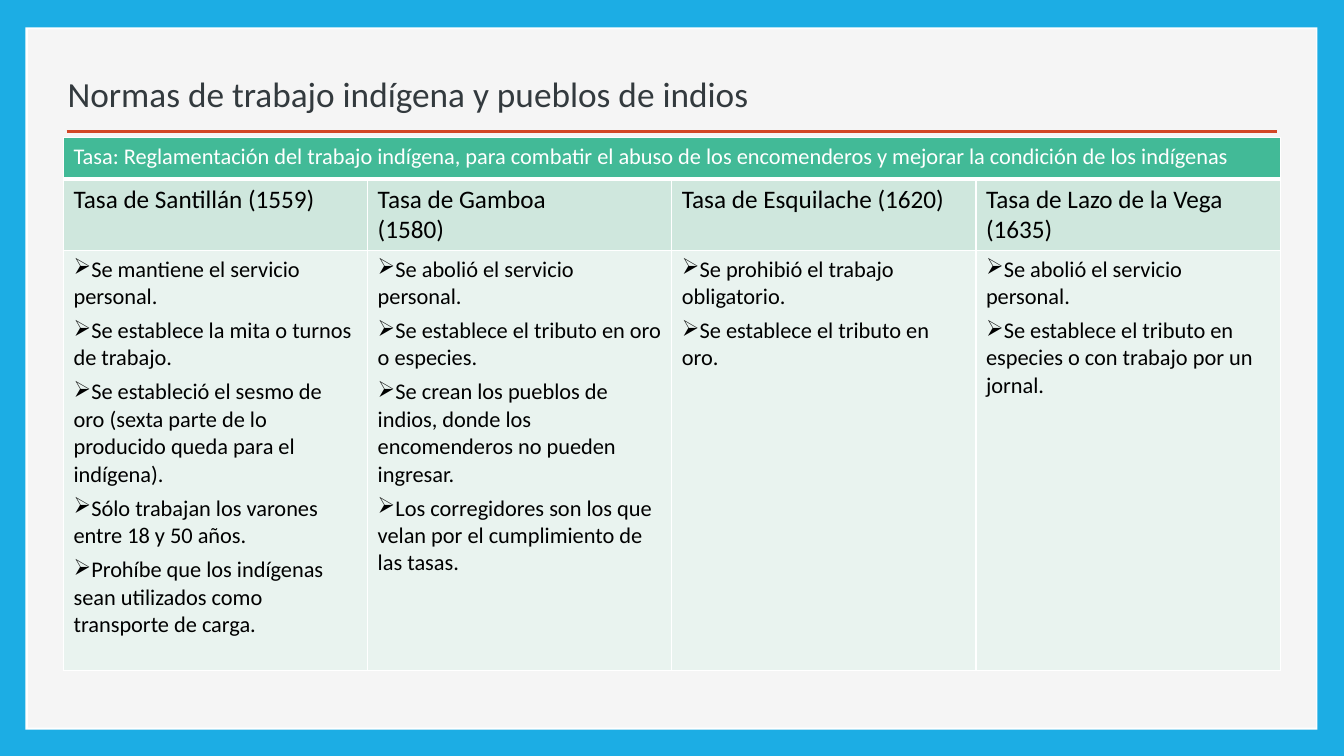
from dataclasses import dataclass

from lxml.etree import SubElement
from pptx import Presentation
from pptx.dml.color import RGBColor as Rgb
from pptx.enum.shapes import MSO_CONNECTOR as Link, MSO_SHAPE as Form
from pptx.enum.text import MSO_ANCHOR as Anchor, MSO_AUTO_SIZE as Fit, PP_ALIGN as Align
from pptx.oxml.ns import qn
from pptx.util import Cm, Pt


@dataclass(frozen=True)
class Theme:
    font: str = "Calibri"
    back: str = "1CADE4"
    white: str = "FFFFFF"
    panel: str = "F5F5F5"
    rule: str = "D24726"
    title: str = "333A3E"
    ink: str = "000000"
    head: str = "42BA97"
    name: str = "CFE7DD"
    body: str = "E9F3EF"
    title_size: float = 25.2
    name_size: float = 18
    body_size: float = 16
    gap: float = 4.8


TITLE = "Normas de trabajo indígena y pueblos de indios"
HEAD = ("Tasa: Reglamentación del trabajo indígena, para combatir el abuso de los "
        "encomenderos y mejorar la condición de los indígenas")
RATES = {
    "Tasa de Santillán (1559)": [
        "Se mantiene el servicio personal.",
        "Se establece la mita o turnos de trabajo.",
        "Se estableció el sesmo de oro (sexta parte de lo producido queda para el indígena).",
        "Sólo trabajan los varones entre 18 y 50 años.",
        "Prohíbe que los indígenas sean utilizados como transporte de carga.",
    ],
    "Tasa de Gamboa\n(1580)": [
        "Se abolió el servicio personal.",
        "Se establece el tributo en oro o especies.",
        "Se crean los pueblos de indios, donde los encomenderos no pueden ingresar.",
        "Los corregidores son los que velan por el cumplimiento de las tasas.",
    ],
    "Tasa de Esquilache (1620)": [
        "Se prohibió el trabajo obligatorio.",
        "Se establece el tributo en oro.",
    ],
    "Tasa de Lazo de la Vega (1635)": [
        "Se abolió el servicio personal.",
        "Se establece el tributo en especies o con trabajo por un jornal.",
    ],
}


class Page:
    """Draws on one slide in one theme; lengths are in centimetres."""

    def __init__(self, slide, theme):
        self.slide, self.theme = slide, theme
        fill = slide.background.fill
        fill.solid()
        fill.fore_color.rgb = Rgb.from_string(theme.back)

    def style(self, frame, size, color):
        for par in frame.paragraphs:
            for run in par.runs:
                font = run.font
                font.name, font.size, font.bold = self.theme.font, Pt(size), False
                font.color.rgb = Rgb.from_string(color)

    def panel(self, left, top, width, height, color):
        box = self.slide.shapes.add_shape(
            Form.RECTANGLE, Cm(left), Cm(top), Cm(width), Cm(height))
        box.shadow.inherit = False
        box.fill.solid()
        box.fill.fore_color.rgb = Rgb.from_string(color)
        box.line.fill.background()

    def rule(self, left, right, top):
        line = self.slide.shapes.add_connector(
            Link.STRAIGHT, Cm(left), Cm(top), Cm(right), Cm(top))
        line.line.color.rgb = Rgb.from_string(self.theme.rule)
        line.line.width = Pt(2)
        SubElement(line.element.spPr, qn("a:effectLst"))

    def title(self, text, left, top, width, height):
        box = self.slide.shapes.title
        box.element.getparent().append(box.element)  # bring to front
        box.left, box.top, box.width, box.height = map(Cm, (left, top, width, height))
        frame = box.text_frame
        frame.text = text
        frame.word_wrap, frame.auto_size = True, Fit.NONE
        frame.vertical_anchor = Anchor.BOTTOM
        frame.paragraphs[0].alignment = Align.LEFT
        frame.paragraphs[0].line_spacing = 0.9
        self.style(frame, self.theme.title_size, self.theme.title)

    def grid(self, left, top, width, rows, cols):
        shape = self.slide.shapes.add_table(
            len(rows), cols, Cm(left), Cm(top), Cm(width), Cm(sum(rows)))
        table = shape.table
        table.first_row = table.horz_banding = False
        for row, high in zip(table.rows, rows):
            row.height = Cm(high)
        return table

    def cell(self, cell, text, size, color, fill, base=1):
        """Fill a cell; base is the width of its bottom border in points."""
        cell.text_frame.text = text
        self.style(cell.text_frame, size, color)
        props = cell._tc.get_or_add_tcPr()
        for side, width in zip("LRTB", (1, 1, 1, base)):
            edge = SubElement(props, qn(f"a:ln{side}"), w=str(Pt(width)))
            solid = SubElement(edge, qn("a:solidFill"))
            SubElement(solid, qn("a:srgbClr"), val=self.theme.white)
        cell.fill.solid()
        cell.fill.fore_color.rgb = Rgb.from_string(fill)

    def bullets(self, frame):
        for num, par in enumerate(frame.paragraphs):
            par.space_before = Pt(self.theme.gap if num else 0)
            props = par._p.get_or_add_pPr()
            props.set("marL", "0")
            props.set("indent", "0")
            SubElement(props, qn("a:buChar"), char="➢")


def main():
    deck = Presentation()
    deck.slide_width, deck.slide_height = Cm(33.87), Cm(19.05)
    theme = Theme()
    page = Page(deck.slides.add_slide(deck.slide_layouts[5]), theme)

    page.panel(0.64, 0.69, 32.56, 17.7, theme.white)
    page.panel(0.71, 0.74, 32.46, 17.6, theme.panel)
    page.rule(1.68, 32.18, 3.32)
    page.title(TITLE, 1.45, 1.24, 19.1, 1.78)

    table = page.grid(1.6, 3.47, 30.66, (1.04, 1.79, 10.58), len(RATES))
    for col, (name, rules) in enumerate(RATES.items()):
        head, label, body = (table.cell(row, col) for row in range(3))
        page.cell(head, "" if col else HEAD, theme.body_size, theme.white, theme.head, 3)
        page.cell(label, name, theme.name_size, theme.ink, theme.name)
        page.cell(body, "\n".join(rules), theme.body_size, theme.ink, theme.body)
        page.bullets(body.text_frame)
    table.cell(0, 0).merge(table.cell(0, len(RATES) - 1))

    deck.save("out.pptx")


if __name__ == "__main__":
    main()
